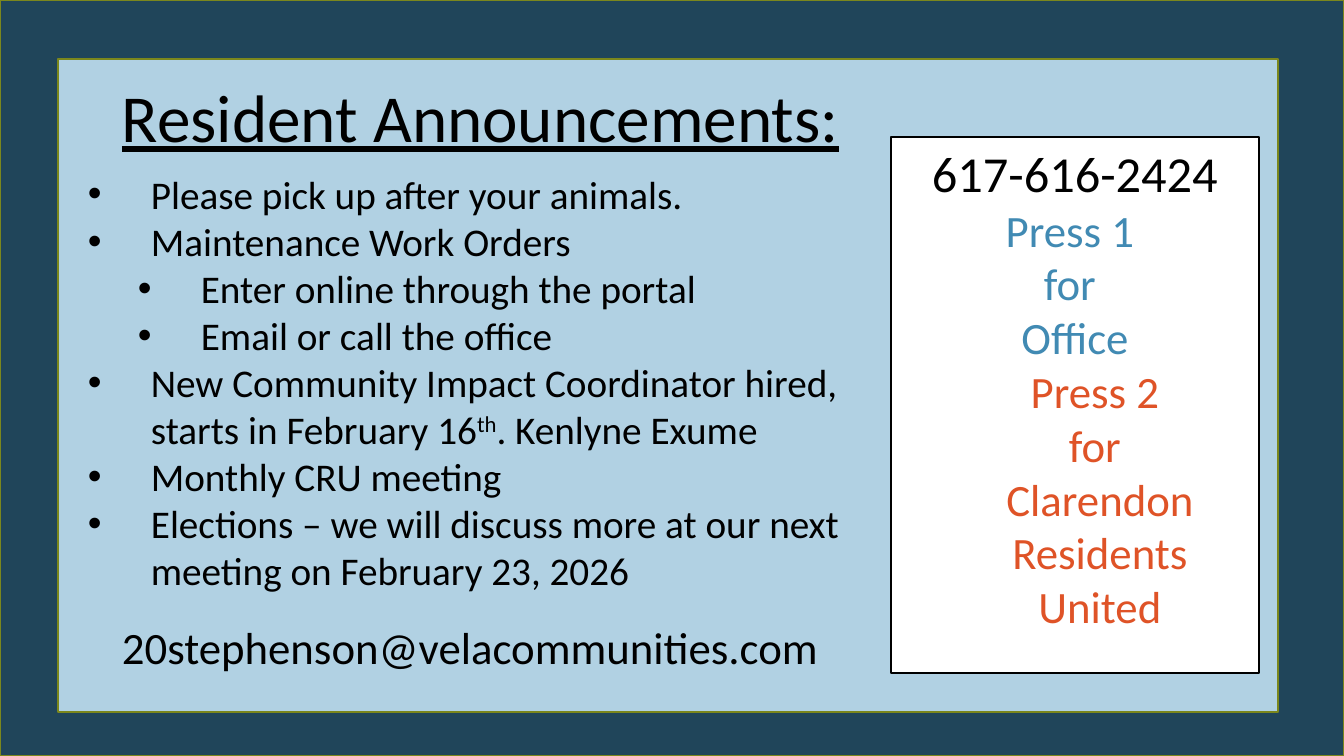
from dataclasses import dataclass

from lxml import etree
from pptx import Presentation
from pptx import util as u
from pptx.dml.color import RGBColor
from pptx.enum import shapes, text
from pptx.oxml.ns import qn

PX = 914400 / 100.8
NAVY = RGBColor(0x20, 0x45, 0x5A)
SKY = RGBColor(0xB1, 0xD1, 0xE3)
OLIVE = RGBColor(0x7B, 0x87, 0x1D)
BLUE = RGBColor(0x41, 0x8A, 0xB3)
ORANGE = RGBColor(0xDF, 0x53, 0x27)
BLACK = RGBColor(0, 0, 0)
WHITE = RGBColor(255, 255, 255)


@dataclass(frozen=True)
class Area:
    left: int
    top: int
    width: int
    height: int


@dataclass(frozen=True)
class Panel:
    area: Area
    fill: RGBColor
    line: RGBColor


@dataclass(frozen=True)
class Line:
    wording: str
    size: int
    color: RGBColor = BLACK
    level: int = 0
    indent: int = 0
    hanging: int = 0
    centered: bool = False
    underline: bool = False
    superscript: str = ""
    ending: str = ""


@dataclass(frozen=True)
class TextArea:
    area: Area
    lines: list[Line]
    wrap: bool = True


def bullet(wording: str, level: int = 0, superscript: str = "", ending: str = "") -> Line:
    return Line(wording, 28, level=level, indent=63 + 50 * level, hanging=63,
                superscript=superscript, ending=ending)


def option(wording: str, color: RGBColor, level: int = 0) -> Line:
    return Line(wording, 32, color, level, indent=50 * level, centered=True)


PAGE = Area(0, 0, 1344, 756)
FRAME = Panel(PAGE, NAVY, OLIVE)
BOARD = Panel(Area(58, 59, 1220, 653), SKY, OLIVE)
PHONE = Panel(Area(891, 137, 368, 536), WHITE, BLACK)

PHONE_LINES = [
    Line("617-616-2424", 36, centered=True),
    *[option(wording, BLUE) for wording in ("Press 1 ", "for ", "Office")],
    *[option(wording, ORANGE, 1) for wording in ("Press 2 ", "for ", "Clarendon Residents United")],
]

TEXT_AREAS = [
    TextArea(Area(78, 165, 812, 437), [
        bullet("Please pick up after your animals."),
        bullet("Maintenance Work Orders"),
        bullet("Enter online through the portal", 1),
        bullet("Email or call the office", 1),
        bullet("New Community Impact Coordinator hired, starts in February 16",
               superscript="th", ending=". Kenlyne Exume"),
        bullet("Monthly CRU meeting"),
        bullet("Elections – we will discuss more at our next meeting on February 23, 2026"),
    ]),
    TextArea(Area(112, 70, 1127, 92), [Line("Resident Announcements:", 48, underline=True)]),
    TextArea(Area(112, 615, 743, 95), [Line("20stephenson@velacommunities.com", 32)], wrap=False),
]


def px(value: int) -> u.Emu:
    return u.Emu(round(value * PX))


def place(area: Area) -> tuple[u.Emu, ...]:
    return px(area.left), px(area.top), px(area.width), px(area.height)


def add_panel(page, panel: Panel):
    box = page.shapes.add_shape(shapes.MSO_SHAPE.RECTANGLE, *place(panel.area))
    box.shadow.inherit = False
    box.fill.solid()
    box.fill.fore_color.rgb = panel.fill
    box.line.color.rgb = panel.line
    box.line.width = u.Pt(1)
    return box


def add_span(para, wording: str, line: Line, raised: bool = False) -> None:
    span = para.add_run()
    span.text = wording
    formats = {"name": "Calibri", "size": u.Pt(line.size), "underline": line.underline}
    for key, value in formats.items():
        setattr(span.font, key, value)
    span.font.color.rgb = line.color
    if raised:
        span.font._element.set("baseline", "30000")


def format_para(para, line: Line) -> None:
    para.level = line.level
    para.alignment = text.PP_ALIGN.CENTER if line.centered else text.PP_ALIGN.LEFT
    properties = para._p.get_or_add_pPr()
    properties.set("marL", str(px(line.indent)))
    properties.set("indent", str(-px(line.hanging)))
    if line.hanging:
        etree.SubElement(properties, qn("a:buFont")).set("typeface", "Arial")
        etree.SubElement(properties, qn("a:buChar")).set("char", "•")


def write_lines(box, lines: list[Line], wrap: bool = True) -> None:
    frame = box.text_frame
    formats = {
        "word_wrap": wrap,
        "auto_size": text.MSO_AUTO_SIZE.SHAPE_TO_FIT_TEXT,
        "vertical_anchor": text.MSO_ANCHOR.TOP,
    }
    for key, value in formats.items():
        setattr(frame, key, value)
    for number, line in enumerate(lines):
        para = frame.add_paragraph() if number else frame.paragraphs[0]
        format_para(para, line)
        add_span(para, line.wording, line)
        if line.superscript:
            add_span(para, line.superscript, line, raised=True)
            add_span(para, line.ending, line)


def main() -> None:
    deck = Presentation()
    deck.slide_width, deck.slide_height = px(PAGE.width), px(PAGE.height)
    page = deck.slides.add_slide(deck.slide_layouts[6])
    page.background.fill.solid()
    page.background.fill.fore_color.rgb = BLUE
    for panel in (FRAME, BOARD):
        add_panel(page, panel)
    for item in TEXT_AREAS:
        box = page.shapes.add_textbox(*place(item.area))
        write_lines(box, item.lines, item.wrap)
    write_lines(add_panel(page, PHONE), PHONE_LINES)
    deck.save("out.pptx")


if __name__ == "__main__":
    main()
